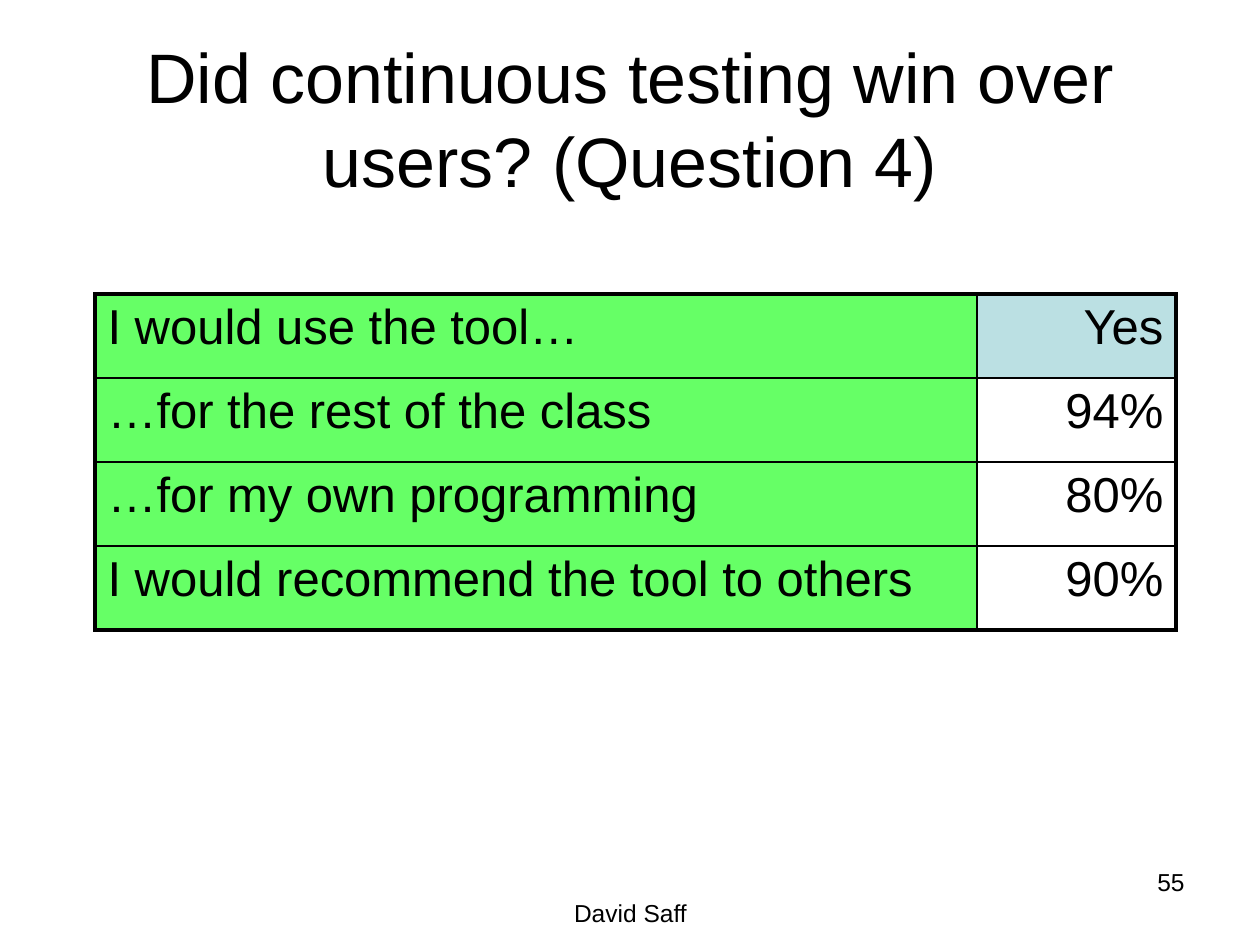
from lxml import etree
from pptx import Presentation
from pptx.dml.color import RGBColor
from pptx.enum.text import MSO_ANCHOR, PP_ALIGN
from pptx.oxml.ns import qn
from pptx.util import Emu, Pt

LEFT, CENTER, RIGHT = PP_ALIGN.LEFT, PP_ALIGN.CENTER, PP_ALIGN.RIGHT
TOP, MIDDLE = MSO_ANCHOR.TOP, MSO_ANCHOR.MIDDLE
EMU_PER_PX = 914400 / 126
COLORS = {
    "text": "000000",
    "border": "000000",
    "background": "FFFFFF",
    "statement": "66FF66",
    "answer_header": "BBE0E3",
}
ANSWERS = [
    ("I would use the tool…", "Yes"),
    ("…for the rest of the class", "94%"),
    ("…for my own programming", "80%"),
    ("I would recommend the tool to others", "90%"),
]


def px(length):
    return Emu(round(length * EMU_PER_PX))


class SlideBuilder:
    font = "Arial"
    outer_border = Pt(2.25)
    inner_border = Pt(1)

    def __init__(self, slide):
        self.slide = slide
        fill = slide.background.fill
        fill.solid()
        fill.fore_color.rgb = RGBColor.from_string(COLORS["background"])

    def set_text(self, text_frame, text, size, align):
        text_frame.text = text
        paragraph = text_frame.paragraphs[0]
        paragraph.alignment = align
        font = paragraph.runs[0].font
        font.name = self.font
        font.size = Pt(size)
        font.color.rgb = RGBColor.from_string(COLORS["text"])

    def text(self, box, text, size, align, anchor=TOP):
        shape = self.slide.shapes.add_textbox(*map(px, box))
        text_frame = shape.text_frame
        text_frame.word_wrap = True
        text_frame.vertical_anchor = anchor
        self.set_text(text_frame, text, size, align)

    def borders(self, cell, outer_sides):
        properties = cell._tc.get_or_add_tcPr()
        for index, side in enumerate(("lnL", "lnR", "lnT", "lnB")):
            width = self.outer_border if side in outer_sides else self.inner_border
            line = etree.Element(qn(f"a:{side}"), w=str(int(width)))
            fill = etree.SubElement(line, qn("a:solidFill"))
            etree.SubElement(fill, qn("a:srgbClr"), val=COLORS["border"])
            properties.insert(index, line)

    def table(self, left, top, column_widths, row_height, rows):
        row_count, column_count = len(rows), len(column_widths)
        box = (left, top, sum(column_widths), row_height * row_count)
        table = self.slide.shapes.add_table(
            row_count, column_count, *map(px, box)
        ).table
        for column, width in zip(table.columns, column_widths):
            column.width = px(width)
        for row_index, values in enumerate(rows):
            table.rows[row_index].height = px(row_height)
            for column_index, value in enumerate(values):
                cell = table.cell(row_index, column_index)
                is_statement = column_index == 0
                align = LEFT if is_statement else RIGHT
                self.set_text(cell.text_frame, value, 28, align)
                if is_statement:
                    color = "statement"
                else:
                    color = "answer_header" if row_index == 0 else "background"
                cell.fill.solid()
                cell.fill.fore_color.rgb = RGBColor.from_string(COLORS[color])
                edges = {
                    "lnL": column_index == 0,
                    "lnR": column_index == column_count - 1,
                    "lnT": row_index == 0,
                    "lnB": row_index == row_count - 1,
                }
                self.borders(cell, [side for side, outer in edges.items() if outer])


def main():
    presentation = Presentation()
    presentation.slide_width = px(1260)
    presentation.slide_height = px(945)
    slide = presentation.slides.add_slide(presentation.slide_layouts[6])
    builder = SlideBuilder(slide)
    builder.text((431, 892, 399, 34), "David Saff", 14, CENTER)
    builder.text((903, 861, 294, 66), "55", 14, RIGHT)
    builder.text(
        (63, 38, 1134, 158),
        "Did continuous testing win over users? (Question 4)",
        40,
        CENTER,
        MIDDLE,
    )
    builder.table(95, 294, (882, 199), 84, ANSWERS)
    presentation.save("out.pptx")


if __name__ == "__main__":
    main()
